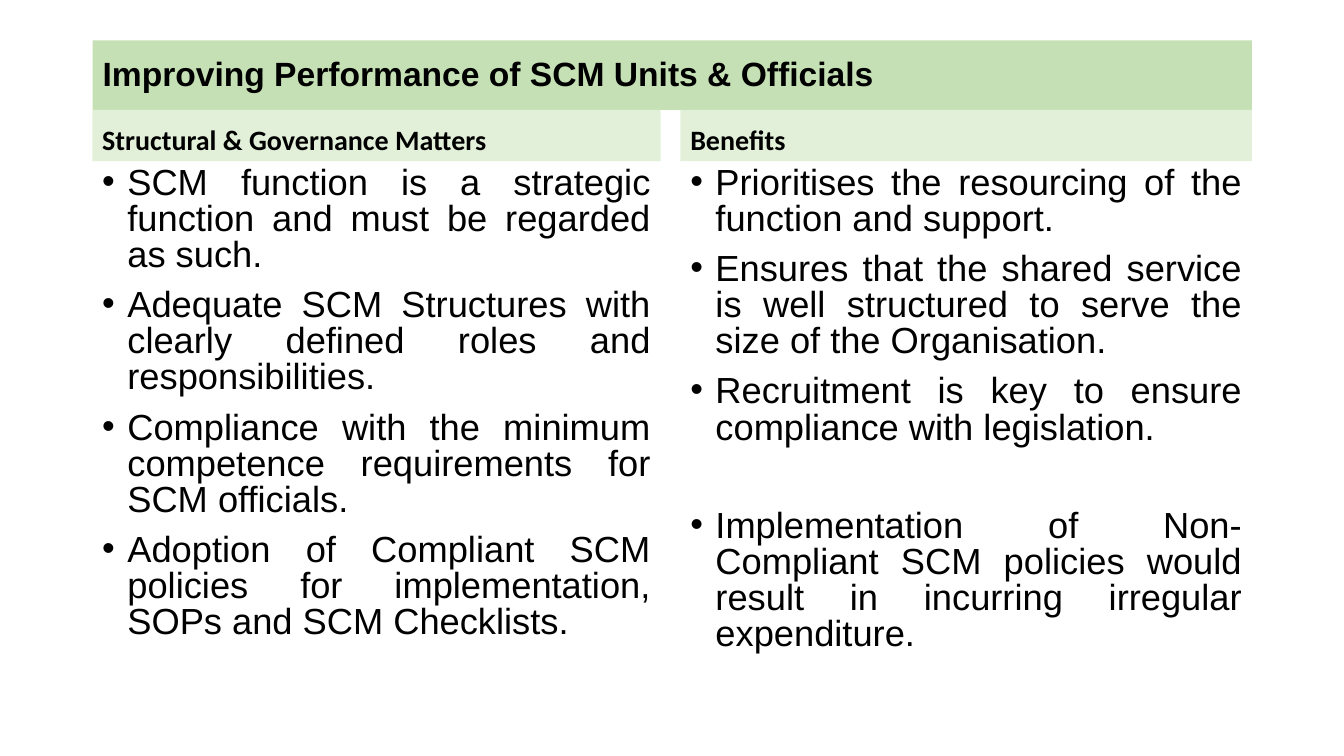
from dataclasses import dataclass

from lxml import etree
from pptx import Presentation
from pptx.dml.color import RGBColor
from pptx.enum.shapes import MSO_SHAPE
from pptx.enum.text import MSO_ANCHOR, PP_ALIGN
from pptx.oxml.ns import qn
from pptx.util import Pt

RECT = MSO_SHAPE.RECTANGLE
TOP, MIDDLE, BOTTOM = MSO_ANCHOR.TOP, MSO_ANCHOR.MIDDLE, MSO_ANCHOR.BOTTOM
LEFT, JUSTIFY = PP_ALIGN.LEFT, PP_ALIGN.JUSTIFY


@dataclass(frozen=True)
class Theme:
    ink: RGBColor = RGBColor(0x00, 0x00, 0x00)
    title_fill: RGBColor = RGBColor(0xC5, 0xE0, 0xB4)
    heading_fill: RGBColor = RGBColor(0xE2, 0xF0, 0xD9)
    title_size: float = 24
    heading_size: float = 20
    body_size: float = 25.9


theme = Theme()
TITLE_FONT = {"name": "Arial", "size": Pt(theme.title_size), "bold": True}
HEADING_FONT = {"name": "Calibri", "size": Pt(theme.heading_size), "bold": True}
BODY_FONT = {"name": "Arial", "size": Pt(theme.body_size), "bold": False}


def add_text(p, text, font, **paragraph_format):
    for name, value in paragraph_format.items():
        setattr(p, name, value)
    r = p.add_run()
    r.text = text
    for name, value in font.items():
        setattr(r.font, name, value)
    r.font.color.rgb = theme.ink


def add_bar(box, fill, anchor, text, font):
    sp = s.shapes.add_shape(RECT, *map(Pt, box))
    sp.shadow.inherit = False
    sp.fill.solid()
    sp.fill.fore_color.rgb = fill
    sp.line.fill.background()
    tf = sp.text_frame
    tf.word_wrap = True
    tf.vertical_anchor = anchor
    add_text(tf.paragraphs[0], text, font, alignment=LEFT, line_spacing=0.9)


prs = Presentation()
prs.slide_width, prs.slide_height = Pt(960), Pt(540)
s = prs.slides.add_slide(prs.slide_layouts[6])

add_bar((66.24, 28.8, 828, 49.7), theme.title_fill, MIDDLE,
        "Improving Performance of SCM Units & Officials", TITLE_FONT)

columns = [
    (65.9, 406, "Structural & Governance Matters", [
        ("SCM function is a strategic function and must be regarded as such.", 10),
        ("Adequate SCM Structures with clearly defined roles and responsibilities.", 10),
        ("Compliance with the minimum competence requirements for SCM officials.", 10),
        ("Adoption of Compliant SCM policies for implementation, SOPs and SCM Checklists.", 10),
    ]),
    (486, 408.24, "Benefits", [
        ("Prioritises the resourcing of the function and support.", 10),
        ("Ensures that the shared service is well structured to serve the size of the Organisation.", 10),
        ("Recruitment is key to ensure compliance with legislation.", 10),
        ("Implementation of Non- Compliant SCM policies would result in incurring irregular expenditure.", 44.5),
    ]),
]

for left, width, heading, points in columns:
    add_bar((left, 78.5, width, 36.7), theme.heading_fill, BOTTOM, heading, HEADING_FONT)
    sp = s.shapes.add_textbox(Pt(left), Pt(115.2), Pt(width), Pt(372.24))
    tf = sp.text_frame
    tf.word_wrap = True
    tf.vertical_anchor = TOP
    for i, (point, gap) in enumerate(points):
        p = tf.paragraphs[0] if i == 0 else tf.add_paragraph()
        add_text(p, point, BODY_FONT, alignment=JUSTIFY, line_spacing=0.83, space_before=Pt(gap))
        pPr = p._p.get_or_add_pPr()
        pPr.set("marL", str(Pt(18)))
        pPr.set("indent", str(Pt(-18)))
        etree.SubElement(pPr, qn("a:buFont")).set("typeface", "Arial")
        etree.SubElement(pPr, qn("a:buChar")).set("char", "•")

prs.save("out.pptx")
